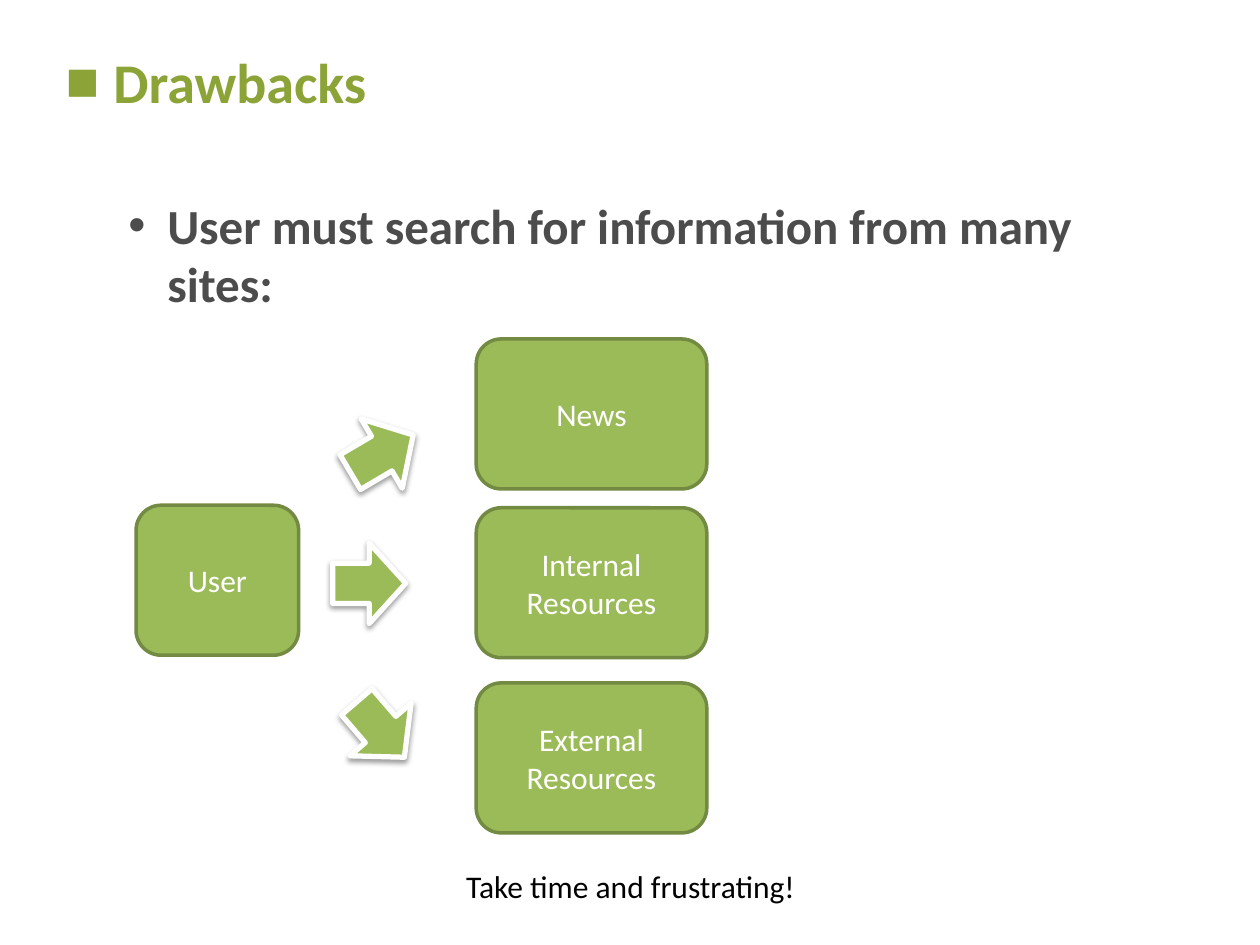
from lxml import etree
from pptx import Presentation
from pptx.dml.color import RGBColor
from pptx.enum import shapes, text
from pptx.oxml import ns
from pptx.util import Inches, Pt

THEME = {
    "font": "Calibri",
    "heading": "8CA338", "point": "4C4C4C", "note": "000000",
    "fill": "9BBB59", "edge": "738A42", "white": "FFFFFF",
    "heading_size": 32, "point_size": 28, "label_size": 18,
}

HEADING = "Drawbacks"
POINT = "User must search for information from many sites:"
NOTE = "Take time and frustrating!"

# label, left, top, width
BOX_HEIGHT = 1.19
BOXES = [
    ("News", 3.78, 2.69, 1.83),
    ("Internal Resources", 3.78, 4.03, 1.83),
    ("External Resources", 3.78, 5.42, 1.83),
    ("User", 1.08, 4.01, 1.29),
]
# left, top, rotation
ARROW_SIZE = (0.58, 0.64)
ARROWS = [(2.74, 3.28, 329.4), (2.64, 4.31, 0), (2.73, 5.47, 49.3)]


def inches(*lengths):
    return [Inches(length) for length in lengths]


def color(name):
    return RGBColor.from_string(THEME[name])


def add_child(parent, tag, **attributes):
    return etree.SubElement(parent, ns.qn(tag), attributes)


def write(frame, words, size, ink, bold=False, align=text.PP_ALIGN.CENTER,
          anchor=text.MSO_ANCHOR.MIDDLE, bullet=None):
    """Fill a text frame; bullet is (symbol, text indent, hanging indent)."""
    frame.word_wrap = True
    frame.auto_size = text.MSO_AUTO_SIZE.NONE
    frame.vertical_anchor = anchor
    paragraph = frame.paragraphs[0]
    paragraph.text = words
    paragraph.alignment = align
    if bullet:
        symbol, indent, hanging = bullet
        properties = paragraph._p.get_or_add_pPr()
        properties.set("marL", str(Inches(indent)))
        properties.set("indent", str(-Inches(hanging)))
        add_child(properties, "a:buFont", typeface="Arial")
        add_child(properties, "a:buChar", char=symbol)
    formats = {"name": THEME["font"], "size": Pt(THEME[size]), "bold": bold}
    for attribute, value in formats.items():
        setattr(paragraph.font, attribute, value)
    paragraph.font.color.rgb = color(ink)


def add_figure(slide, preset, place, edge, width):
    figure = slide.shapes.add_shape(preset, *inches(*place))
    figure.shadow.inherit = False
    figure.fill.solid()
    figure.fill.fore_color.rgb = color("fill")
    figure.line.color.rgb = color(edge)
    figure.line.width = Pt(width)
    return figure


def add_drop_shadow(figure):
    effects = figure._element.spPr.find(ns.qn("a:effectLst"))
    shadow = add_child(effects, "a:outerShdw", blurRad=str(Pt(3.1)),
                       dist=str(Pt(1.6)), dir="5400000", rotWithShape="0")
    black = add_child(shadow, "a:srgbClr", val="000000")
    add_child(black, "a:alpha", val="38000")


def main():
    deck = Presentation()
    deck.slide_width, deck.slide_height = inches(10, 7.5)
    slide = deck.slides.add_slide(deck.slide_layouts[5])

    heading = slide.shapes.title
    heading.left, heading.top, heading.width, heading.height = inches(0.42, 0.33, 9, 0.7)
    listed = {"bold": True, "align": text.PP_ALIGN.LEFT, "anchor": text.MSO_ANCHOR.TOP}
    write(heading.text_frame, HEADING, "heading_size", "heading",
          bullet=("■", 0.38, 0.38), **listed)

    point = slide.shapes.add_textbox(*inches(0.42, 1.5, 9, 1.1))
    write(point.text_frame, POINT, "point_size", "point",
          bullet=("•", 0.81, 0.31), **listed)

    for label, left, top, width in BOXES:
        box = add_figure(slide, shapes.MSO_SHAPE.ROUNDED_RECTANGLE,
                         (left, top, width, BOX_HEIGHT), "edge", 2)
        write(box.text_frame, label, "label_size", "white")

    for left, top, rotation in ARROWS:
        arrow = add_figure(slide, shapes.MSO_SHAPE.RIGHT_ARROW,
                           (left, top, *ARROW_SIZE), "white", 3)
        arrow.rotation = rotation
        add_drop_shadow(arrow)

    note = slide.shapes.add_textbox(*inches(1.42, 6.83, 7.17, 0.4))
    write(note.text_frame, NOTE, "label_size", "note", anchor=text.MSO_ANCHOR.TOP)

    deck.save("out.pptx")


if __name__ == "__main__":
    main()
